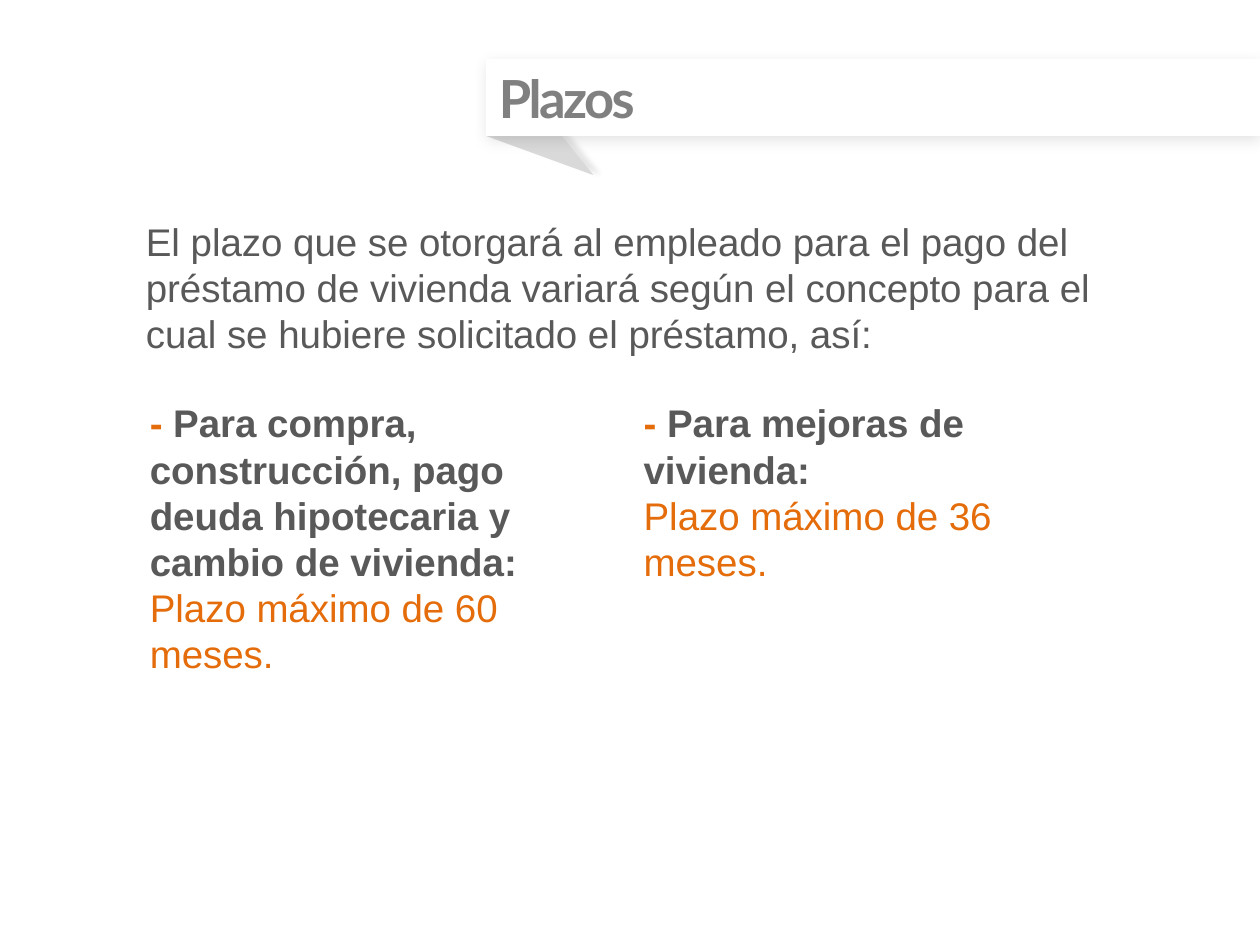
from lxml import etree
from pptx import Presentation
from pptx.dml.color import RGBColor
from pptx.enum import shapes, text
from pptx.oxml import parse_xml
from pptx.oxml.ns import nsdecls
from pptx.util import Inches, Pt

WHITE = RGBColor(0xFF, 0xFF, 0xFF)
FOLD_GRAY = RGBColor(0xD9, 0xD9, 0xD9)
TITLE_GRAY = RGBColor(0x80, 0x80, 0x80)
BODY_GRAY = RGBColor(0x59, 0x59, 0x59)
ORANGE = RGBColor(0xE4, 0x6C, 0x0A)


def style_shape(sp, color, alpha, blur, dist, angle):
    """Plain fill without outline, plus a soft black shadow."""
    sp.fill.solid()
    sp.fill.fore_color.rgb = color
    sp.line.fill.background()
    sp.shadow.inherit = False
    effects = sp.element.spPr.find("{*}effectLst")
    effects.append(parse_xml(
        f'<a:outerShdw {nsdecls("a")} blurRad="{Pt(blur)}" dist="{Pt(dist)}" '
        f'dir="{angle * 60000}" algn="ctr" rotWithShape="0">'
        f'<a:srgbClr val="000000"><a:alpha val="{alpha * 1000}"/></a:srgbClr>'
        '</a:outerShdw>'))


def add_run(p, content, color, size=22, font="Arial", bold=False, spacing=None):
    r = p.add_run()
    r.text = content
    r.font.name, r.font.size, r.font.bold = font, Pt(size), bold
    r.font.color.rgb = color
    if spacing is not None:
        r.font._element.set("spc", str(round(spacing * 100)))


def add_text(slide, box, paragraphs):
    """Each paragraph is a list of (text, format) pairs."""
    tf = slide.shapes.add_textbox(*map(Inches, box)).text_frame
    tf.word_wrap = True
    tf.auto_size = text.MSO_AUTO_SIZE.SHAPE_TO_FIT_TEXT
    for i, runs in enumerate(paragraphs):
        p = tf.paragraphs[0] if i == 0 else tf.add_paragraph()
        p.line_spacing = Pt(26.4)
        for content, fmt in runs:
            add_run(p, content, **fmt)


def add_banner(slide, left, top, width, height, title):
    # Folded corner below the banner
    corner = [(left, top + height), (left + 0.31, top + 0.25),
              (left + 0.85, top + 0.92)]
    points = [(Inches(x), Inches(y)) for x, y in corner]
    builder = slide.shapes.build_freeform(*points[0])
    builder.add_line_segments(points[1:], close=True)
    style_shape(builder.convert_to_shape(), FOLD_GRAY, 9, 3, 4, 355)

    # White strip
    strip = slide.shapes.add_shape(
        shapes.MSO_SHAPE.FLOWCHART_PROCESS,
        *map(Inches, (left, top, width, height)))
    style_shape(strip, WHITE, 11, 8, 1.8, 90)

    # Title in front of the strip
    sp = slide.shapes.title
    sp.left, sp.top, sp.width, sp.height = map(
        Inches, (left, top, 2.28, height))
    strip.element.addnext(sp.element)
    tf = sp.text_frame
    tf.word_wrap = True
    tf.auto_size = text.MSO_AUTO_SIZE.SHAPE_TO_FIT_TEXT
    tf.vertical_anchor = text.MSO_ANCHOR.TOP
    p = tf.paragraphs[0]
    p.alignment = text.PP_ALIGN.LEFT
    add_run(p, title, TITLE_GRAY, size=30, font="Lato", bold=True, spacing=-1.5)


def add_term(slide, box, purpose, term):
    add_text(slide, box, [
        [("-", dict(color=ORANGE, bold=True)),
         (" " + purpose, dict(color=BODY_GRAY, bold=True))],
        [(term, dict(color=ORANGE))],
    ])


def main():
    prs = Presentation()
    prs.slide_width, prs.slide_height = Inches(10), Inches(7.5)
    slide = prs.slides.add_slide(prs.slide_layouts[5])

    add_banner(slide, 3.86, 0.47, 6.14, 0.61, "Plazos")

    # Introduction
    add_text(slide, (1.06, 1.68, 7.84, 1.21), [[(
        "El plazo que se otorgará al empleado para el pago del préstamo de "
        "vivienda variará según el concepto para el cual se hubiere "
        "solicitado el préstamo, así:", dict(color=BODY_GRAY))]])

    # Two columns of terms
    add_term(slide, (1.09, 3.12, 3.91, 2.32),
             "Para compra, construcción, pago deuda hipotecaria y cambio de "
             "vivienda:", "Plazo máximo de 60 meses.")
    add_term(slide, (5.01, 3.12, 3.91, 1.58),
             "Para mejoras de vivienda:", "Plazo máximo de 36 meses.")

    prs.save("out.pptx")


if __name__ == "__main__":
    main()
